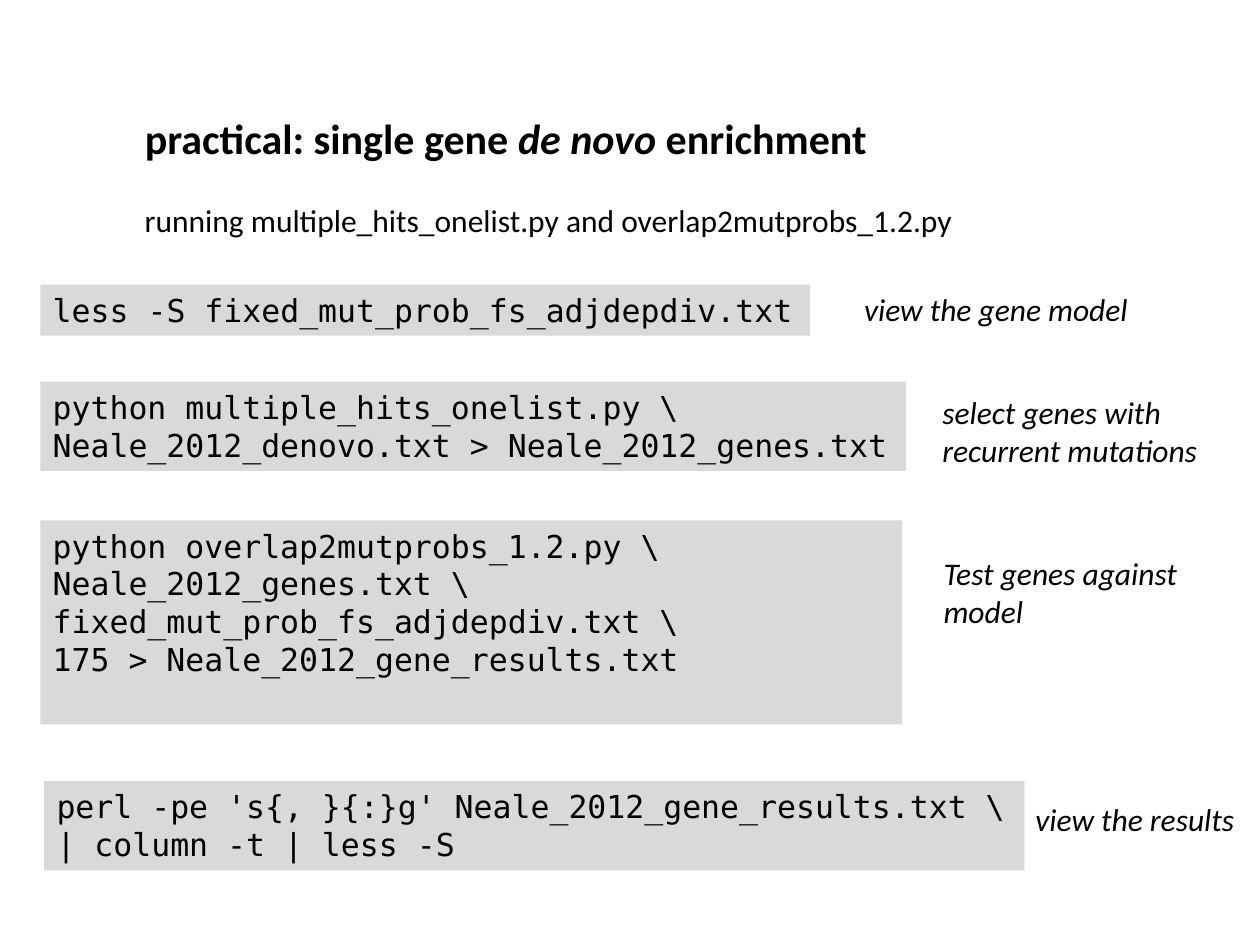
from pptx import Presentation
from pptx.dml.color import RGBColor
from pptx.enum.shapes import MSO_SHAPE
from pptx.enum.text import MSO_ANCHOR, MSO_AUTO_SIZE, PP_ALIGN
from pptx.util import Inches, Pt

BLACK = RGBColor(0x00, 0x00, 0x00)
GREY = RGBColor(0xD9, 0xD9, 0xD9)
COLUMNS, ROWS = 100, 75
TITLE_LEFT, TITLE_WIDTH = 10.5, 66.9


def write_text(shape, paragraphs, font="Calibri", size=18, bold=False, italic=False):
    frame = shape.text_frame
    frame.word_wrap = True
    frame.auto_size = MSO_AUTO_SIZE.NONE
    frame.vertical_anchor = MSO_ANCHOR.TOP
    for index, runs in enumerate(paragraphs):
        paragraph = frame.paragraphs[0] if index == 0 else frame.add_paragraph()
        paragraph.alignment = PP_ALIGN.LEFT
        for text, emphasis in runs:
            run = paragraph.add_run()
            run.text = text
            run.font.name = font
            run.font.size = Pt(size)
            run.font.bold = bold
            run.font.italic = italic or emphasis
            run.font.color.rgb = BLACK


class SlideBuilder:
    code_font = "DejaVu Sans Mono"
    padding_rows = 1
    line_rows = 3.04

    def __init__(self, presentation):
        self.column = presentation.slide_width / COLUMNS
        self.row = presentation.slide_height / ROWS
        self.slide = presentation.slides.add_slide(presentation.slide_layouts[5])

    def box(self, left, top, width, lines):
        height = self.padding_rows + lines * self.line_rows
        return (round(left * self.column), round(top * self.row),
                round(width * self.column), round(height * self.row))

    def title(self, runs, left, top, width):
        shape = self.slide.shapes.title
        shape.left, shape.top, shape.width, shape.height = self.box(left, top, width, 1.35)
        write_text(shape, [runs], size=24, bold=True)

    def note(self, text, left, top, width, lines=1, italic=True):
        shape = self.slide.shapes.add_textbox(*self.box(left, top, width, lines))
        write_text(shape, [[(text, False)]], italic=italic)

    def code(self, commands, left, top, width, spare_lines=0):
        lines = len(commands) + spare_lines
        shape = self.slide.shapes.add_shape(
            MSO_SHAPE.RECTANGLE, *self.box(left, top, width, lines))
        shape.shadow.inherit = False
        shape.fill.solid()
        shape.fill.fore_color.rgb = GREY
        shape.line.fill.background()
        write_text(shape, [[(command, False)] for command in commands], font=self.code_font)


def main():
    presentation = Presentation()
    presentation.slide_width = Inches(10)
    presentation.slide_height = Inches(7.5)
    builder = SlideBuilder(presentation)

    builder.title(
        [("practical: single gene ", False), ("de novo", True), (" enrichment", False)],
        TITLE_LEFT, 8.4, TITLE_WIDTH)
    builder.note("running multiple_hits_onelist.py and overlap2mutprobs_1.2.py",
                 TITLE_LEFT, 15.5, TITLE_WIDTH, italic=False)

    builder.code(["less -S fixed_mut_prob_fs_adjdepdiv.txt"], 3.2, 22.6, 61.1)
    builder.note("view the gene model", 67.6, 22.5, 23.8)

    builder.code(["python multiple_hits_onelist.py \\",
                  "Neale_2012_denovo.txt > Neale_2012_genes.txt"], 3.2, 30.3, 68.7)
    builder.note("select genes with recurrent mutations", 73.8, 30.7, 23.8, lines=2)

    builder.code(["python overlap2mutprobs_1.2.py \\",
                  "Neale_2012_genes.txt \\",
                  "fixed_mut_prob_fs_adjdepdiv.txt \\",
                  "175 > Neale_2012_gene_results.txt"], 3.2, 41.3, 68.4, spare_lines=1)
    builder.note("Test genes against model", 73.9, 43.5, 23.8, lines=2)

    builder.code(["perl -pe 's{, }{:}g' Neale_2012_gene_results.txt \\",
                  "| column -t | less -S"], 3.5, 62, 77.8)
    builder.note("view the results", 81.2, 63, 18.6)

    presentation.save("out.pptx")


if __name__ == "__main__":
    main()
